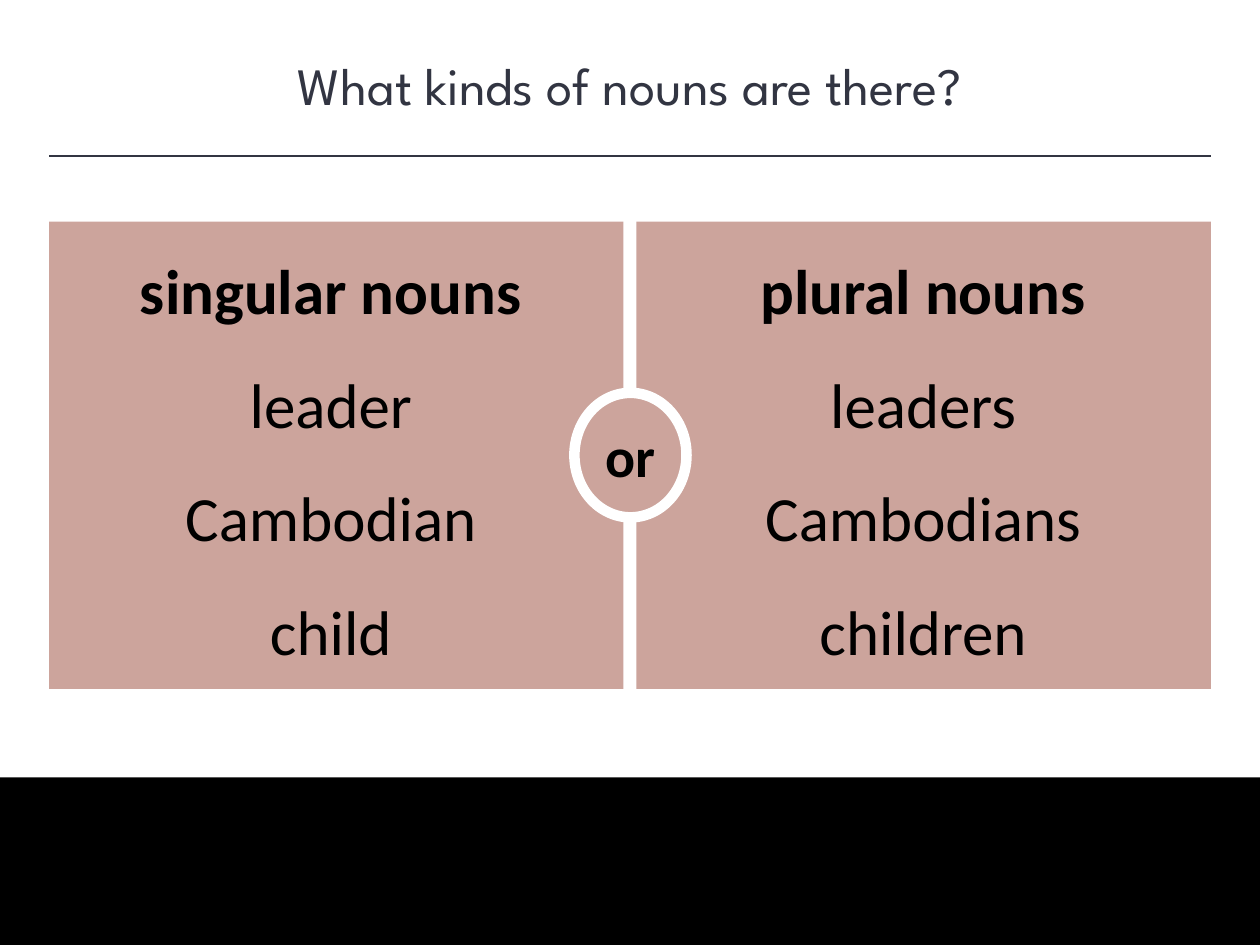
from lxml import etree
from pptx import Presentation
from pptx import util as u
from pptx.dml import color
from pptx.enum import shapes, text
from pptx.oxml import ns

INK, BLACK, WHITE, ROSE = "323542", "000000", "FFFFFF", "CCA49C"


def rgb(value):
    return color.RGBColor.from_string(value)


class NounSlide:
    """Draws styled elements on one slide."""

    heading_font = "League Spartan"
    body_font = "Calibri"

    def __init__(self, slide):
        self.slide = slide

    def block(self, box, fill, kind=shapes.MSO_SHAPE.RECTANGLE, border=None):
        block = self.slide.shapes.add_shape(kind, *map(u.Cm, box))
        block.shadow.inherit = False
        block.fill.solid()
        block.fill.fore_color.rgb = rgb(fill)
        if border:
            block.line.color.rgb = rgb(border)
            block.line.width = u.Pt(6)
        else:
            block.line.fill.background()
        return block

    def rule(self, left, right, top):
        rule = self.slide.shapes.add_connector(
            shapes.MSO_CONNECTOR.STRAIGHT, u.Cm(left), u.Cm(top), u.Cm(right), u.Cm(top))
        rule.line.color.rgb = rgb(INK)
        rule.line.width = u.Pt(1)
        etree.SubElement(rule._element.spPr, ns.qn("a:effectLst"))

    def set_lines(self, frame, lines, size, font, ink, bold_first=False, spacing=1.0):
        frame.word_wrap = True
        for index, line in enumerate(lines):
            paragraph = frame.paragraphs[0] if index == 0 else frame.add_paragraph()
            paragraph.text = line
            paragraph.alignment = text.PP_ALIGN.CENTER
            paragraph.line_spacing = spacing
            paragraph.font.name = font
            paragraph.font.size = u.Pt(size)
            paragraph.font.bold = bold_first and index == 0
            paragraph.font.color.rgb = rgb(ink)

    def title(self, box, wording):
        frame = self.slide.shapes.add_textbox(*map(u.Cm, box)).text_frame
        self.set_lines(frame, [wording], 30, self.heading_font, INK)

    def word_list(self, box, words):
        frame = self.slide.shapes.add_textbox(*map(u.Cm, box)).text_frame
        frame.vertical_anchor = text.MSO_ANCHOR.MIDDLE
        self.set_lines(frame, words, 36, self.body_font, BLACK, bold_first=True, spacing=1.5)

    def badge(self, box, wording):
        frame = self.block(box, ROSE, shapes.MSO_SHAPE.OVAL, WHITE).text_frame
        frame.margin_left = frame.margin_right = 0
        frame.vertical_anchor = text.MSO_ANCHOR.MIDDLE
        self.set_lines(frame, [wording], 32, self.body_font, BLACK, bold_first=True)


def main():
    deck = Presentation()
    deck.slide_width, deck.slide_height = u.Cm(25.4), u.Cm(19.05)
    nouns = NounSlide(deck.slides.add_slide(deck.slide_layouts[6]))

    nouns.title((0, 0.94, 25.4, 1.55), "What kinds of nouns are there?")
    nouns.block((0, 15.67, 25.4, 3.38), BLACK)
    nouns.rule(0.99, 24.41, 3.15)

    columns = [
        (0.99, 2.06, ["singular nouns", "leader", "Cambodian", "child"]),
        (12.83, 14, ["plural nouns", "leaders", "Cambodians", "children"]),
    ]
    for panel_left, words_left, words in columns:
        nouns.block((panel_left, 4.47, 11.58, 9.42), ROSE)
        nouns.word_list((words_left, 4.14, 9.22, 9.5), words)
    nouns.badge((11.58, 7.92, 2.26, 2.51), "or")

    deck.save("out.pptx")


if __name__ == "__main__":
    main()
